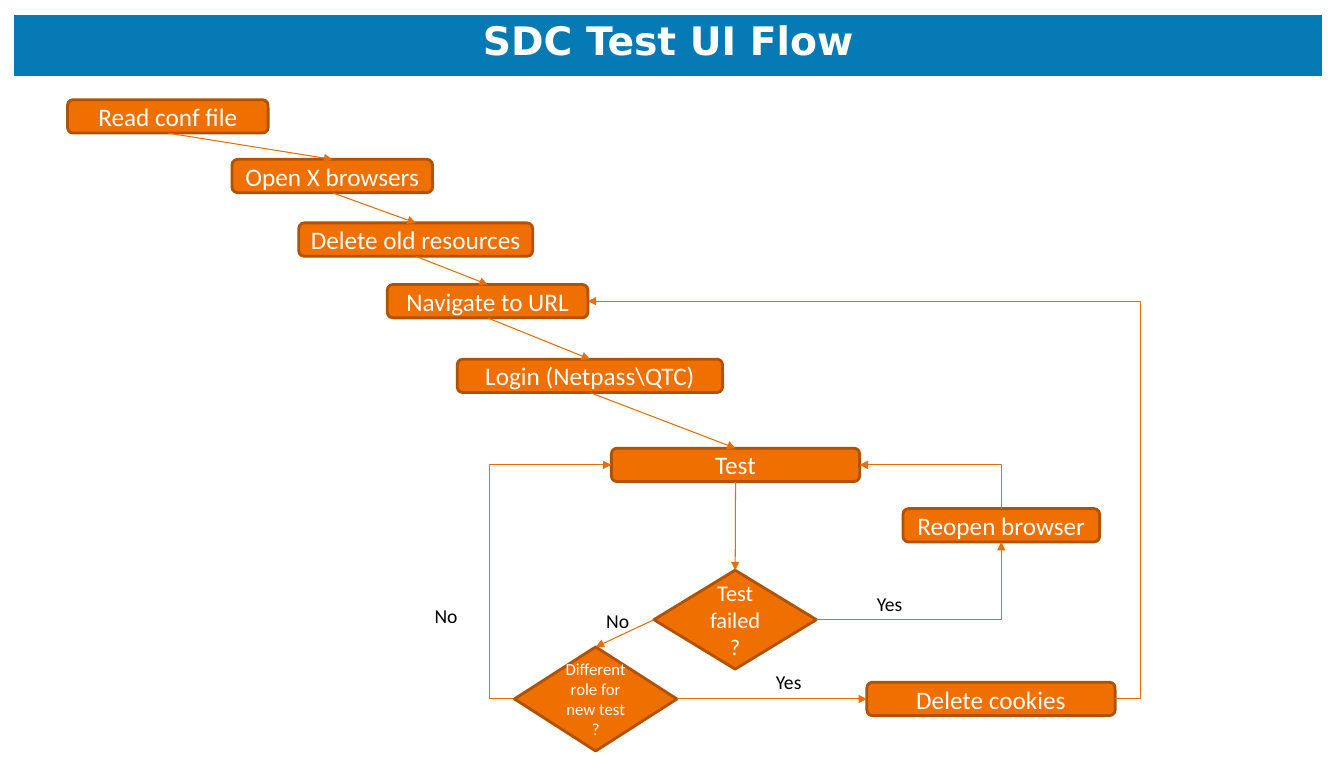
from lxml import etree
from pptx import Presentation
from pptx.dml.color import RGBColor
from pptx.enum import shapes, text
from pptx.oxml import ns
from pptx.util import Cm, Pt

# Colours and fonts
WHITE = RGBColor(0xFF, 0xFF, 0xFF)
BLACK = RGBColor(0, 0, 0)
BLUE = RGBColor(0x06, 0x7A, 0xB4)
ORANGE = RGBColor(0xEF, 0x6F, 0x00)
BROWN = RGBColor(0xB1, 0x52, 0x00)
ARROW = RGBColor(0xEA, 0x6D, 0x00)
BODY, HEADING = "Calibri", "DejaVu Sans"

# Content: lengths in centimetres
TITLE = "SDC Test UI Flow"
STEP_H = 0.84
STEPS = {  # name: (text, left, top, width)
    "read": ("Read conf file", 1.7, 2.51, 5.05),
    "open": ("Open X browsers", 5.84, 4.01, 5.05),
    "delete": ("Delete old resources", 7.52, 5.61, 5.89),
    "navigate": ("Navigate to URL", 9.75, 7.16, 5.05),
    "login": ("Login (Netpass\\QTC)", 11.51, 9.04, 6.68),
    "test": ("Test", 15.39, 11.28, 6.25),
    "reopen": ("Reopen browser", 22.73, 12.8, 4.95),
    "cookies": ("Delete cookies", 21.82, 17.17, 6.25),
}
DECISIONS = {  # name: (text, left, top, width, height, size)
    "failed": ("Test failed ?", 16.46, 14.35, 4.09, 2.49, 16),
    "role": ("Different role for new test ?", 12.95, 16.28, 4.09, 2.62, 12),
}
LABELS = [("Yes", 21.82, 14.76), ("No", 15.01, 15.19),
          ("No", 10.69, 15.06), ("Yes", 19.28, 16.74)]

TOP, LEFT, BOTTOM, RIGHT = range(4)
CHAIN = ["read", "open", "delete", "navigate", "login", "test", "failed"]
STRAIGHT = [(a, BOTTOM, b, TOP) for a, b in zip(CHAIN, CHAIN[1:])] + [
    ("failed", LEFT, "role", TOP),
    ("role", RIGHT, "cookies", LEFT),
]
CORNERS = [  # one bend; the last item is the end with the arrowhead
    ("failed", RIGHT, "reopen", BOTTOM, "tailEnd"),
    ("test", RIGHT, "reopen", TOP, "headEnd"),
]
LOOPS = [("cookies", RIGHT, "navigate", RIGHT), ("role", LEFT, "test", LEFT)]
LOOP_OUT = Cm(0.64)


def add_text(tf, words, size, color, font=BODY, align=None):
    p = tf.paragraphs[0]
    p.alignment = align
    r = p.add_run()
    r.text = words
    r.font.size, r.font.name = Pt(size), font
    r.font.color.rgb = color
    return r


def add_box(s, kind, words, left, top, width, height, size):
    sp = s.shapes.add_shape(kind, Cm(left), Cm(top), Cm(width), Cm(height))
    sp.shadow.inherit = False
    sp.fill.solid()
    sp.fill.fore_color.rgb = ORANGE
    sp.line.color.rgb = BROWN
    sp.line.width = Pt(2)
    sp.text_frame.vertical_anchor = text.MSO_ANCHOR.MIDDLE
    add_text(sp.text_frame, words, size, WHITE, align=text.PP_ALIGN.CENTER)
    return sp


def add_arrow(s, kind, start, start_site, end, end_site, arrow_end="tailEnd"):
    c = s.shapes.add_connector(kind, 0, 0, 0, 0)
    c.begin_connect(start, start_site)
    c.end_connect(end, end_site)
    c.line.color.rgb = ARROW
    c.line.width = Pt(0.75)
    ln = c.line._get_or_add_ln()
    etree.SubElement(ln, ns.qn("a:" + arrow_end), type="triangle")
    etree.SubElement(c._element.spPr, ns.qn("a:effectLst"))
    return c


def add_title(s):
    frame = s.shapes.add_table(1, 1, Cm(0.33), Cm(0.36), Cm(32.97), Cm(1.6))
    table = frame.table
    table.first_row = table.horz_banding = False
    cell = table.cell(0, 0)
    tc_pr = cell._tc.get_or_add_tcPr()
    for side, width in (("L", 1), ("R", 1), ("T", 1), ("B", 3)):
        ln = etree.SubElement(tc_pr, ns.qn("a:ln" + side), w=str(Pt(width)))
        fill = etree.SubElement(ln, ns.qn("a:solidFill"))
        etree.SubElement(fill, ns.qn("a:srgbClr"), val=str(WHITE))
    cell.fill.solid()
    cell.fill.fore_color.rgb = BLUE
    r = add_text(cell.text_frame, TITLE, 28, WHITE, HEADING, text.PP_ALIGN.CENTER)
    r.font.bold = True


def main():
    prs = Presentation()
    prs.slide_width, prs.slide_height = Cm(33.83), Cm(19.05)
    s = prs.slides.add_slide(prs.slide_layouts[6])
    add_title(s)

    # Steps and decisions
    boxes = {}
    for name, (words, left, top, width) in STEPS.items():
        boxes[name] = add_box(s, shapes.MSO_SHAPE.ROUNDED_RECTANGLE,
                              words, left, top, width, STEP_H, 18)
    for name, decision in DECISIONS.items():
        boxes[name] = add_box(s, shapes.MSO_SHAPE.FLOWCHART_DECISION, *decision)

    # Arrows
    for a, a_site, b, b_site in STRAIGHT:
        add_arrow(s, shapes.MSO_CONNECTOR.STRAIGHT, boxes[a], a_site, boxes[b], b_site)
    for a, a_site, b, b_site, arrow_end in CORNERS:
        c = add_arrow(s, shapes.MSO_CONNECTOR.ELBOW, boxes[a], a_site,
                      boxes[b], b_site, arrow_end)
        c._element.spPr.find(ns.qn("a:prstGeom")).set("prst", "bentConnector2")
    for a, a_site, b, b_site in LOOPS:
        c = add_arrow(s, shapes.MSO_CONNECTOR.ELBOW, boxes[a], a_site, boxes[b], b_site)
        bend = round(-LOOP_OUT / c.width * 100000)
        guides = c._element.spPr.find(ns.qn("a:prstGeom")).find(ns.qn("a:avLst"))
        etree.SubElement(guides, ns.qn("a:gd"), name="adj1", fmla=f"val {bend}")

    # Branch labels
    for words, left, top in LABELS:
        tb = s.shapes.add_textbox(Cm(left), Cm(top), Cm(1.17), Cm(0.86))
        tb.text_frame.word_wrap = False
        tb.text_frame.auto_size = text.MSO_AUTO_SIZE.SHAPE_TO_FIT_TEXT
        add_text(tb.text_frame, words, 14, BLACK)

    prs.save("out.pptx")


if __name__ == "__main__":
    main()
